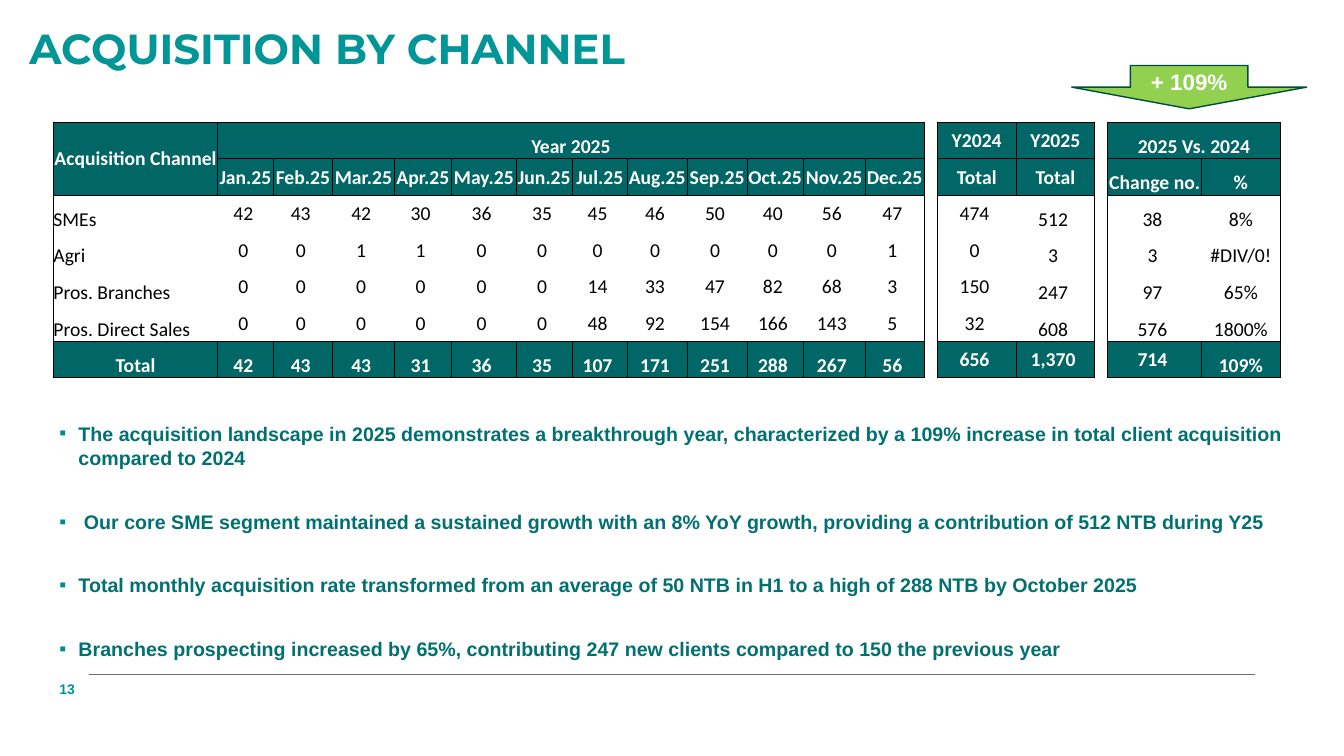
from lxml.etree import SubElement
from pptx import Presentation
from pptx.dml.color import RGBColor
from pptx.enum.shapes import MSO_CONNECTOR, MSO_SHAPE
from pptx.enum.text import MSO_ANCHOR, PP_ALIGN
from pptx.oxml.ns import qn
from pptx.util import Inches, Pt

# Content
TITLE = "ACQUISITION BY CHANNEL"
BADGE = "+ 109%"
PAGE = "13"
MONTHS = "Jan Feb Mar Apr May Jun Jul Aug Sep Oct Nov Dec".split()
# channel: (total of 2024, months of 2025)
SALES = {
    "SMEs": (474, [42, 43, 42, 30, 36, 35, 45, 46, 50, 40, 56, 47]),
    "Agri": (0, [0, 0, 1, 1, 0, 0, 0, 0, 0, 0, 0, 1]),
    "Pros. Branches": (150, [0, 0, 0, 0, 0, 0, 14, 33, 47, 82, 68, 3]),
    "Pros. Direct Sales": (32, [0, 0, 0, 0, 0, 0, 48, 92, 154, 166, 143, 5]),
}
POINTS = [
    "The acquisition landscape in 2025 demonstrates a breakthrough year, characterized by "
    "a 109% increase in total client acquisition compared to 2024",
    " Our core SME segment maintained a sustained growth with an 8% YoY growth, providing "
    "a contribution of 512 NTB during Y25",
    "Total monthly acquisition rate transformed from an average of 50 NTB in H1 to a high "
    "of 288 NTB by October 2025",
    "Branches prospecting increased by 65%, contributing 247 new clients compared to 150 "
    "the previous year",
]

# Theme: colours and type styles
THEME = {
    "head": "006666", "grid": "000000", "paper": "FFFFFF", "rule": "707173",
    "badge": "92D050", "edge": "004E3A", "bullet": "008B8D",
    "title": ("Montserrat", 30, True, "009597"),
    "label": ("Arial", 16, True, "FFFFFF"),
    "point": ("Arial", 14, True, "007071"),
    "page": ("Arial", 10, True, "009597"),
    "dark": ("Calibri", 14, True, "FFFFFF"),
    "light": ("Calibri", 14, False, "000000"),
}

# Layout in inches: left, top, width, height
SIZE = (13.33, 7.5)
PLACE = {
    "title": (0.19, 0.25, 13.33, 0.82),
    "badge": (10.63, 0.65, 2.33, 0.43),
    "table": (0.53, 1.21, 12.17, 2.54),
    "points": (0.49, 4.12, 12.34, 2.49),
    "page": (0.49, 6.7, 0.59, 0.28),
}
RULE = (0.88, 6.69, 12.45, 6.69)
COLS = [1.63, 0.55, 0.59, 0.61, 0.57, 0.64, 0.56, 0.54, 0.6, 0.59, 0.56, 0.61, 0.59,
        0.13, 0.78, 0.78, 0.13, 0.93, 0.78]
GAPS = (13, 16)
STARTS, ENDS = (0, 14, 17), (12, 15, 18)
SPANS = [(0, 0, 1, 0), (0, 1, 0, 12), (0, 17, 0, 18)]
LOW, MID = MSO_ANCHOR.BOTTOM, MSO_ANCHOR.MIDDLE


def color(name):
    return RGBColor.from_string(THEME.get(name, name))


def inch(vals):
    return [Inches(v) for v in vals]


def apply(obj, **vals):
    for key, val in vals.items():
        setattr(obj, key, val)


def write(para, text, style, **form):
    face, size, bold, ink = THEME[style]
    run = para.add_run()
    run.text = text
    apply(run.font, name=face, size=Pt(size), bold=bold)
    run.font.color.rgb = color(ink)
    apply(para, **form)


def edge(cell, sides):
    """Draw the listed sides of a cell and clear the others."""
    props = cell._tc.get_or_add_tcPr()
    for spot, side in enumerate("LRTB"):
        line = props.makeelement(qn(f"a:ln{side}"), {"w": str(Pt(0.5))})
        props.insert(spot, line)
        if side in sides:
            fill = SubElement(line, qn("a:solidFill"))
            SubElement(fill, qn("a:srgbClr"), val=THEME["grid"])
        else:
            SubElement(line, qn("a:noFill"))


# Table values: sums, change and growth
def fill_row(name, past, months):
    now = sum(months)
    rate = f"{(now - past) / past:.0%}" if past else "#DIV/0!"
    count = [f"{n:,} " for n in (*months, past, now, now - past)]
    return [name, *count[:12], "", *count[12:14], "", count[14], rate]


def make_rows():
    top = ["Acquisition Channel", "Year 2025", *[""] * 12, "Y2024", "Y2025", "",
           "2025 Vs. 2024", ""]
    sub = ["", *[f"{m}.25" for m in MONTHS], "", "Total", "Total", "", "Change no.", "%"]
    body = [fill_row(name, *vals) for name, vals in SALES.items()]
    past = sum(old for old, _ in SALES.values())
    sums = [sum(col) for col in zip(*(months for _, months in SALES.values()))]
    return [top, sub, *body, fill_row("Total", past, sums)]


def anchor(row, col, last):
    if row == 0:
        return LOW if col in (1, 17) else MID
    if row == 1:
        return LOW if col > 16 else MID
    if row == last:
        return MID if 14 <= col <= 17 else LOW
    return MID if 1 <= col <= 14 else LOW


def add_grid(slide):
    rows = make_rows()
    last = len(rows) - 1
    table = slide.shapes.add_table(len(rows), len(COLS), *inch(PLACE["table"])).table
    apply(table, first_row=False, horz_banding=False)
    for col, width in zip(table.columns, COLS):
        col.width = Inches(width)
    for r, texts in enumerate(rows):
        for c, text in enumerate(texts):
            cell = table.cell(r, c)
            body = 1 < r < last
            apply(cell, margin_left=0, margin_right=0, margin_top=Inches(0.01),
                  margin_bottom=0, vertical_anchor=anchor(r, c, last))
            if c in GAPS or not body:
                cell.fill.solid()
                cell.fill.fore_color.rgb = color("paper" if c in GAPS else "head")
            else:
                cell.fill.background()
            if c in GAPS:
                edge(cell, "LR")
            elif body:
                shown = {"L": c in STARTS, "R": c in ENDS, "T": r == 2, "B": r == last - 1}
                edge(cell, [side for side, on in shown.items() if on])
            else:
                edge(cell, "LRTB")
            if text:
                side = PP_ALIGN.LEFT if body and c == 0 else PP_ALIGN.CENTER
                write(cell.text_frame.paragraphs[0], text, "light" if body else "dark",
                      alignment=side)
    for r1, c1, r2, c2 in SPANS:
        table.cell(r1, c1).merge(table.cell(r2, c2))


def add_points(slide):
    frame = slide.shapes.add_textbox(*inch(PLACE["points"])).text_frame
    frame.word_wrap = True
    for i, text in enumerate(POINTS):
        para = frame.add_paragraph() if i else frame.paragraphs[0]
        props = para._p.get_or_add_pPr()
        apply_indent = {"marL": Inches(0.19), "indent": -Inches(0.19)}
        for key, val in apply_indent.items():
            props.set(key, str(val))
        tint = SubElement(props, qn("a:buClr"))
        SubElement(tint, qn("a:srgbClr"), val=THEME["bullet"])
        SubElement(props, qn("a:buFont"), typeface="Arial")
        SubElement(props, qn("a:buChar"), char="▪")
        write(para, text, "point", line_spacing=1.05, space_before=Pt(27.8 if i else 0))


def main():
    deck = Presentation()
    deck.slide_width, deck.slide_height = inch(SIZE)
    slide = deck.slides.add_slide(deck.slide_layouts[5])
    shapes = slide.shapes

    # Footer rule
    rule = shapes.add_connector(MSO_CONNECTOR.STRAIGHT, *inch(RULE))
    rule.line.color.rgb = color("rule")
    rule.line.width = Pt(0.5)
    SubElement(rule._element.spPr, qn("a:effectLst"))

    # Title
    title = shapes.title
    apply(title, **dict(zip(("left", "top", "width", "height"), inch(PLACE["title"]))))
    apply(title.text_frame, vertical_anchor=MSO_ANCHOR.TOP, word_wrap=True)
    write(title.text_frame.paragraphs[0], TITLE, "title",
          alignment=PP_ALIGN.LEFT, line_spacing=0.85)

    # Growth arrow
    badge = shapes.add_shape(MSO_SHAPE.DOWN_ARROW, *inch(PLACE["badge"]))
    badge.shadow.inherit = False
    badge.fill.solid()
    badge.fill.fore_color.rgb = color("badge")
    badge.line.color.rgb = color("edge")
    badge.line.width = Pt(1)
    badge.text_frame.vertical_anchor = MID
    write(badge.text_frame.paragraphs[0], BADGE, "label", alignment=PP_ALIGN.CENTER)

    # Table, findings, page number
    add_grid(slide)
    add_points(slide)
    page = shapes.add_textbox(*inch(PLACE["page"])).text_frame
    page.word_wrap = True
    write(page.paragraphs[0], PAGE, "page")

    deck.save("out.pptx")


if __name__ == "__main__":
    main()
